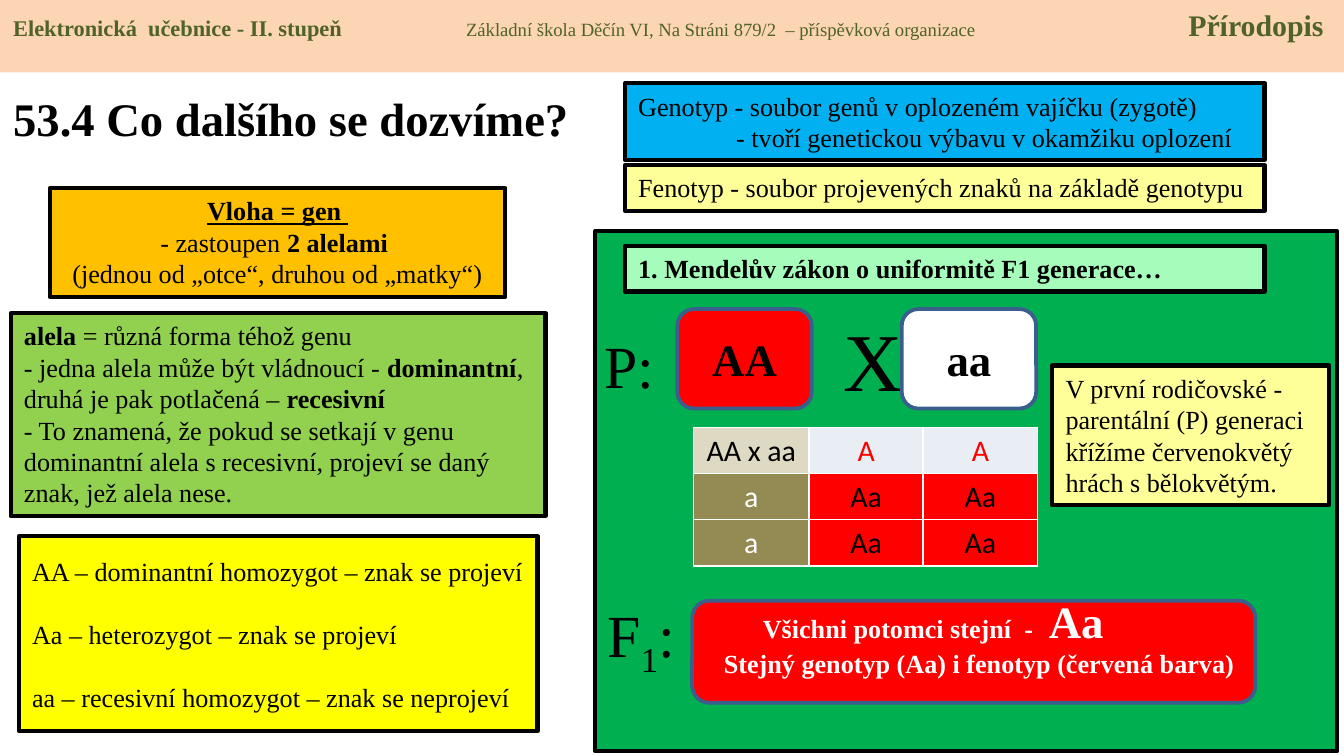
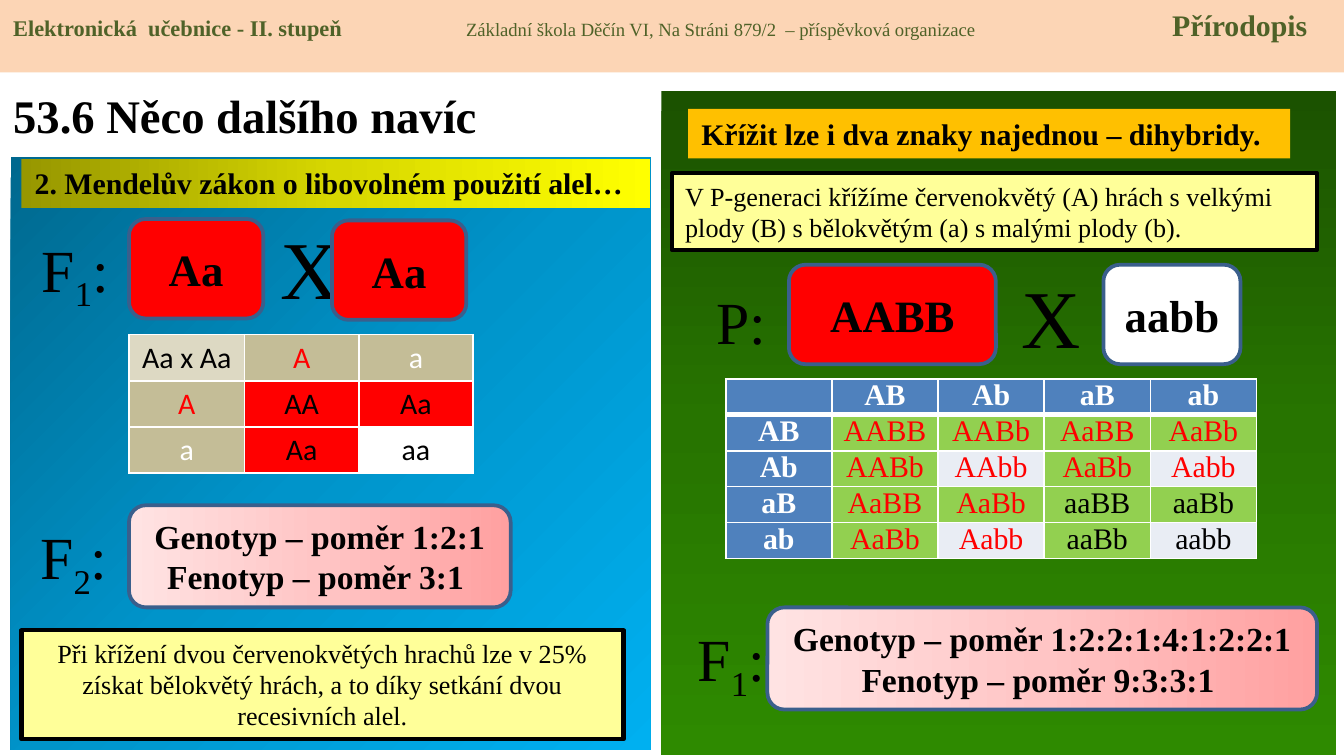
import copy

import pptx
import pptx.dml.color
import pptx.enum.shapes
import pptx.enum.text
import pptx.oxml.ns
import pptx.util
from lxml import etree

Inches, Pt = pptx.util.Inches, pptx.util.Pt
qn = pptx.oxml.ns.qn
SHAPES = pptx.enum.shapes.MSO_SHAPE
CENTER = pptx.enum.text.PP_ALIGN.CENTER
LEFT = pptx.enum.text.PP_ALIGN.LEFT
TOP = pptx.enum.text.MSO_ANCHOR.TOP
MIDDLE = pptx.enum.text.MSO_ANCHOR.MIDDLE

SERIF, SANS = "Times New Roman", "Calibri"
BLACK, WHITE, RED = "000000", "FFFFFF", "FF0000"
PEACH, OLIVE = "FCD5B5", "4F6228"
ORANGE, CREAM, LIME, PALE = "FFC000", "FFFF99", "92D050", "E9EDF4"
OUTLINE, TABLE_BLUE = "3A5F8C", "4F81BD"
# Gradients: angle (clockwise), then the colours at start, middle and end
GREEN_FADE = (90, "1B5200", "277400", "2E8A00")
BLUE_FADE = (45, "00688E", "0094CA", "00B0F0")
YELLOW_FADE = (0, "979700", "D7D700", "FFFF00")
PINK_FADE = (180, "FFA0A0", "FFC5C5", "FFE3E3")
BOLD = {"bold": True}


def rgb(value):
    return pptx.dml.color.RGBColor.from_string(value)


def inside(region, left, top, width, height):
    """Box measured from the top left corner of a region."""
    return region[0] + left, region[1] + top, width, height


def write(frame, paragraphs, size=14, color=BLACK, bold=False, align=LEFT, font=SERIF):
    """Each paragraph is a string or a list of runs: strings or (string, format)."""
    frame.word_wrap = True
    for number, content in enumerate(paragraphs):
        paragraph = frame.add_paragraph() if number else frame.paragraphs[0]
        paragraph.alignment = align
        for part in [content] if isinstance(content, str) else content:
            text, style = (part, {}) if isinstance(part, str) else part
            run = paragraph.add_run()
            run.text = text
            run.font.name = font
            run.font.size = Pt(style.get("size", size))
            run.font.bold = style.get("bold", bold)
            run.font.underline = style.get("underline", False)
            run.font.color.rgb = rgb(color)
            if "baseline" in style:
                run._r.get_or_add_rPr().set("baseline", style["baseline"])


def paint(shape, fill):
    shape.shadow.inherit = False
    if isinstance(fill, str):
        shape.fill.solid()
        shape.fill.fore_color.rgb = rgb(fill)
        return
    angle, *colors = fill
    shape.fill.gradient()
    shape.fill.gradient_angle = (360 - angle) % 360
    stops = shape.element.spPr.find(".//" + qn("a:gsLst"))
    stops.append(copy.deepcopy(stops[-1]))
    for stop, color, position in zip(shape.fill.gradient_stops, colors, (0, 0.5, 1)):
        stop.color.rgb = rgb(color)
        stop.position = position


def panel(slide, box, fill, paragraphs=(), line=None, width=2.25,
          kind=SHAPES.RECTANGLE, anchor=TOP, **style):
    shape = slide.shapes.add_shape(kind, *map(Inches, box))
    paint(shape, fill)
    if line:
        shape.line.color.rgb = rgb(line)
        shape.line.width = Pt(width)
    else:
        shape.line.fill.background()
    shape.text_frame.vertical_anchor = anchor
    write(shape.text_frame, paragraphs, **style)
    return shape.text_frame


def note(slide, box, fill, paragraphs, **style):
    return panel(slide, box, fill, paragraphs, line=BLACK, **style)


def pill(slide, box, fill, paragraphs, size=24, align=CENTER, **style):
    return panel(slide, box, fill, paragraphs, line=OUTLINE, width=2, bold=True,
                 kind=SHAPES.ROUNDED_RECTANGLE, anchor=MIDDLE,
                 size=size, align=align, **style)


def label(slide, box, text, size=32, align=CENTER, **style):
    frame = slide.shapes.add_textbox(*map(Inches, box)).text_frame
    write(frame, [text], size=size, align=align, **style)
    return frame


def generation(slide, region, left, top, letter, index=""):
    runs = [letter, (index, {"baseline": "-25000"}), ":"] if index else letter + ":"
    label(slide, inside(region, left, top, 0.8 if index else 0.63, 0.64), runs)


def times_sign(slide, region, left, top):
    label(slide, inside(region, left, top, 0.47, 0.84), "X", size=44)


def indent(paragraph, inches):
    paragraph._p.get_or_add_pPr().set("marL", str(Inches(inches)))


# Tables of crosses
def style_cell(cell, text, fill, color, bottom=1, margins=(0.01, 0.01, 0.01, 0), **style):
    cell.fill.solid()
    cell.fill.fore_color.rgb = rgb(fill)
    cell.margin_left, cell.margin_top, cell.margin_right, cell.margin_bottom = map(
        Inches, margins)
    if text:
        write(cell.text_frame, [text], size=16, color=color, align=CENTER, **style)
    else:
        etree.SubElement(cell.text_frame.paragraphs[0]._p, qn("a:endParaRPr"), sz="1600")
    properties = cell._tc.get_or_add_tcPr()
    for position, side in enumerate(("lnL", "lnR", "lnT", "lnB")):
        points = bottom if side == "lnB" else 1
        border = etree.Element(qn("a:" + side), w=str(Pt(points)))
        solid = etree.SubElement(border, qn("a:solidFill"))
        etree.SubElement(solid, qn("a:srgbClr"), val=WHITE)
        properties.insert(position, border)


def add_grid(slide, left, top, widths, height):
    count = len(widths)
    table = slide.shapes.add_table(count, count, *map(
        Inches, (left, top, sum(widths), height))).table
    table.first_row = table.horz_banding = False
    for column, width in zip(table.columns, widths):
        column.width = Inches(width)
    for row in table.rows:
        row.height = Inches(height / count)
    return table


def offspring(first, second):
    return "".join("".join(sorted(pair)) for pair in zip(first, second))


def monohybrid_table(slide, left, top, title, across, down, across_fill, down_fill):
    table = add_grid(slide, left, top, (0.86, 0.85, 0.85), 1.03)

    def fill_in(row, column, text, fill, color=BLACK):
        cell = table.cell(row, column)
        cell.vertical_anchor = MIDDLE
        style_cell(cell, text, fill, color, font=SANS)

    fill_in(0, 0, title, "DDD9C3")
    for i in (0, 1):
        fill_in(0, i + 1, across[i], across_fill, RED if across[i] == "A" else WHITE)
        fill_in(i + 1, 0, down[i], down_fill, RED if down[i] == "A" else WHITE)
        for j in (0, 1):
            child = offspring(down[i], across[j])
            fill_in(i + 1, j + 1, child, RED if "A" in child else WHITE)


def dihybrid_table(slide, left, top):
    gametes = ["", "AB", "Ab", "aB", "ab"]
    table = add_grid(slide, left, top, [0.79] * 5, 1.33)
    for i, mother in enumerate(gametes):
        for j, father in enumerate(gametes):
            if i and j:
                text = offspring(mother, father)
                look = (LIME if "B" in text else PALE, RED if "A" in text else BLACK)
            else:
                text, look = mother or father, (TABLE_BLUE, WHITE)
            style_cell(table.cell(i, j), text, *look, bottom=1 if i else 3,
                       margins=(0.07, 0, 0.07, 0), bold=not (i and j))


# Shared top of each slide
def header(slide, title, title_box, subject_end):
    label(slide, title_box, title, size=25, align=LEFT,
          bold=True).vertical_anchor = MIDDLE
    frame = panel(slide, (0, 0, 10, 0.54), PEACH, [[
        ("Elektronická  učebnice - II. stupeň\t", {"size": 12, "bold": True}),
        "Základní škola Děčín VI, Na Stráni 879/2  – příspěvková organizace\t",
        ("Přírodopis", {"size": 16, "bold": True})]], size=10, color=OLIVE)
    tabs = etree.SubElement(frame.paragraphs[0]._p.get_or_add_pPr(), qn("a:tabLst"))
    for position, side in ((3.37, "l"), (subject_end, "r")):
        etree.SubElement(tabs, qn("a:tab"), pos=str(Inches(position)), algn=side)


# Slide 1
def allele_terms(slide, region):
    note(slide, inside(region, 0.29, 0, 3.39, 0.81), ORANGE, [
        [("Vloha = gen ", {"bold": True, "underline": True})],
        ["- zastoupen ", ("2 alelami ", BOLD)],
        "(jednou od „otce“, druhou od „matky“)"], align=CENTER)
    note(slide, inside(region, 0, 0.93, 3.98, 1.51), LIME, [
        [("alela", BOLD), " = různá forma téhož genu"],
        ["- jedna alela může být vládnoucí - ", ("dominantní", BOLD),
         ", druhá je pak potlačená – ", ("recesivní", BOLD)],
        "- To znamená, že pokud se setkají v genu dominantní alela s recesivní, "
        "projeví se daný znak, jež alela nese."])
    zygotes = note(slide, inside(region, 0.06, 2.59, 3.86, 1.45), "FFFF00", [
        "AA – dominantní homozygot – znak se projeví",
        "Aa – heterozygot – znak se projeví",
        "aa – recesivní homozygot – znak se neprojeví"])
    zygotes.margin_top = Inches(0.14)
    for paragraph in zygotes.paragraphs[1:]:
        paragraph.space_before = Pt(17)


def type_terms(slide, region):
    genotype = note(slide, inside(region, 0, 0, 4.76, 0.57), "00B0F0", [
        "Genotyp - soubor genů v oplozeném vajíčku (zygotě)",
        "- tvoří genetickou výbavu v okamžiku oplození"])
    indent(genotype.paragraphs[1], 0.73)
    note(slide, inside(region, 0, 0.61, 4.76, 0.34), CREAM,
         ["Fenotyp - soubor projevených znaků na základě genotypu"])


def first_law(slide, region):
    panel(slide, region, "00B050", line=BLACK)
    note(slide, inside(region, 0.22, 0.11, 4.76, 0.34), "A6FCBA",
         ["1. Mendelův zákon o uniformitě F1 generace…"], bold=True)
    generation(slide, region, -0.06, 0.68, "P")
    times_sign(slide, region, 1.75, 0.53)
    pill(slide, inside(region, 0.61, 0.58, 1, 0.74), RED, ["AA"])
    pill(slide, inside(region, 2.28, 0.58, 1, 0.74), WHITE, ["aa"])
    monohybrid_table(slide, region[0] + 0.73, region[1] + 1.46,
                     "AA x aa", "AA", "aa", PALE, "948A54")
    generation(slide, region, -0.06, 2.68, "F", "1")
    result = pill(slide, inside(region, 0.72, 2.75, 4.19, 0.76), RED, [
        ["Všichni potomci stejní  - ", (" Aa", {"size": 24, "bold": True})],
        "Stejný genotyp (Aa) i fenotyp (červená barva)"],
        size=14, color=WHITE, align=LEFT)
    result.margin_top, result.margin_bottom = 0, Inches(0.23)
    for paragraph, inches in zip(result.paragraphs, (0.39, 0.1)):
        indent(paragraph, inches)
    note(slide, inside(region, 3.4, 1, 2.06, 1.04), CREAM, [
        "V první rodičovské - parentální (P) generaci křížíme červenokvětý "
        "hrách s bělokvětým."])


# Slide 2
def second_law(slide, region):
    panel(slide, region, BLUE_FADE)
    panel(slide, inside(region, 0.08, 0.01, 4.68, 0.37), YELLOW_FADE,
          ["2. Mendelův zákon o libovolném použití alel…"], size=16, bold=True)
    generation(slide, region, 0.08, 0.51, "F", "1")
    times_sign(slide, region, 1.91, 0.4)
    for left, top in ((0.88, 0.46), (2.39, 0.47)):
        pill(slide, inside(region, left, top, 1, 0.74), RED, ["Aa"])
    monohybrid_table(slide, region[0] + 0.88, region[1] + 1.32,
                     "Aa x Aa", "Aa", "Aa", "C4BD97", "C4BD97")
    generation(slide, region, 0.07, 2.65, "F", "2")
    pill(slide, inside(region, 0.88, 2.59, 2.84, 0.76), PINK_FADE,
         ["Genotyp – poměr 1:2:1", "Fenotyp – poměr 3:1 "], size=18)
    note(slide, inside(region, 0.08, 3.52, 4.48, 0.81), CREAM, [
        "Při křížení dvou červenokvětých hrachů lze v 25% získat bělokvětý hrách, "
        "a to díky setkání dvou recesivních alel."], align=CENTER)


def dihybrids(slide, region):
    panel(slide, region, GREEN_FADE)
    panel(slide, inside(region, 0.2, 0.13, 4.48, 0.37), ORANGE,
          ["Křížit lze i dva znaky najednou – dihybridy."], size=16, bold=True)
    note(slide, inside(region, 0.08, 0.61, 4.8, 0.57), CREAM, [
        "V P-generaci křížíme červenokvětý (A) hrách s velkými plody (B) "
        "s bělokvětým (a) s malými plody (b)."])
    generation(slide, region, 0.28, 1.39, "P")
    times_sign(slide, region, 2.58, 1.25)
    pill(slide, inside(region, 0.95, 1.29, 1.54, 0.74), RED, ["AABB"])
    pill(slide, inside(region, 3.29, 1.29, 1.02, 0.74), WHITE, ["aabb"])
    dihybrid_table(slide, region[0] + 0.48, region[1] + 2.14)
    generation(slide, region, 0.12, 3.9, "F", "1")
    pill(slide, inside(region, 0.79, 3.84, 4.09, 0.76), PINK_FADE,
         ["Genotyp – poměr 1:2:2:1:4:1:2:2:1", "Fenotyp – poměr 9:3:3:1 "], size=18)


def main():
    deck = pptx.Presentation()
    # Widescreen, 16:9
    deck.slide_width, deck.slide_height = Inches(10), Inches(10 * 9 / 16)
    blank = deck.slide_layouts[6]

    terms = deck.slides.add_slide(blank)
    header(terms, "53.4 Co dalšího se dozvíme?", (0, 0.55, 4.37, 0.65), 9.75)
    allele_terms(terms, (0.08, 1.4))
    type_terms(terms, (4.65, 0.62))
    first_law(terms, (4.43, 1.72, 5.52, 3.87))

    crosses = deck.slides.add_slide(blank)
    header(crosses, "53.6 Něco dalšího navíc", (0, 0.53, 3.66, 0.65), 9.63)
    second_law(crosses, (0.08, 1.17, 4.76, 4.41))
    dihybrids(crosses, (4.92, 0.68, 5.02, 4.94))
    deck.save("out.pptx")


if __name__ == "__main__":
    main()
